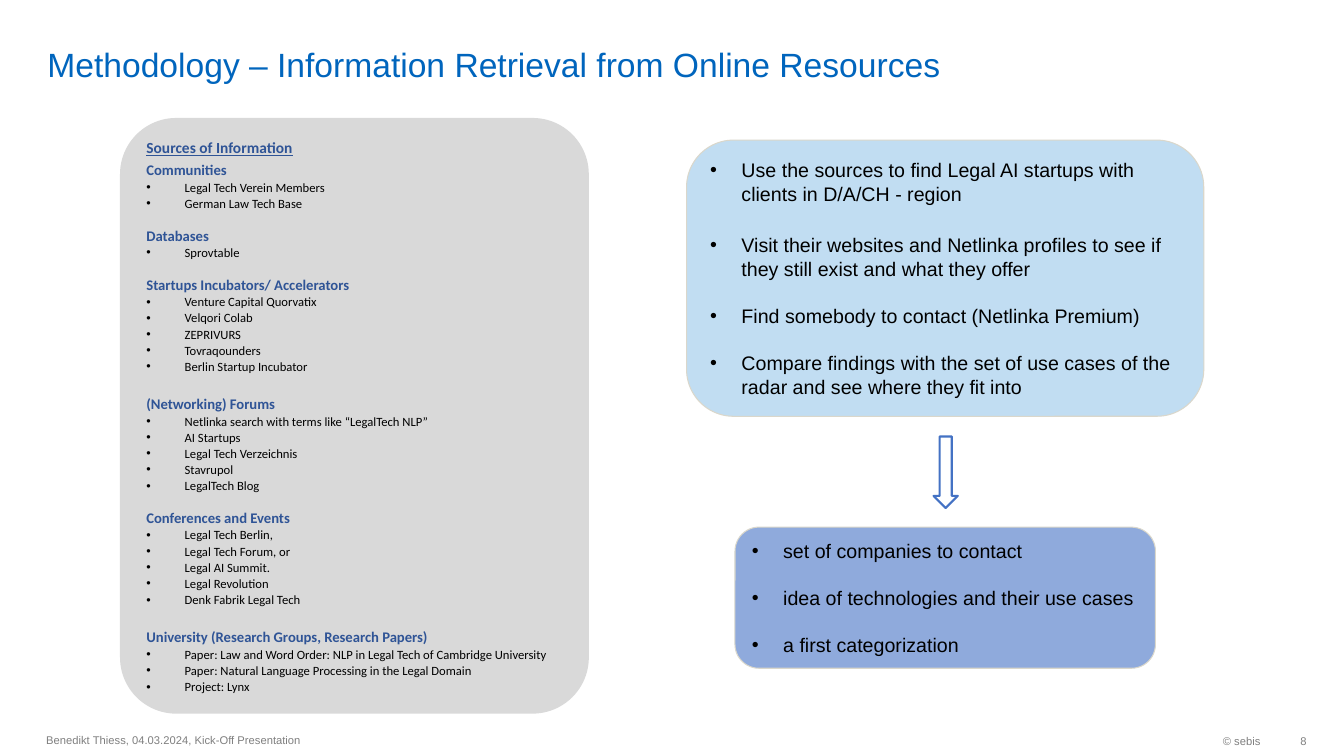
import pptx
import pptx.util
import pptx.dml.color
import pptx.enum.shapes
import pptx.enum.text
import pptx.oxml.ns
import lxml.etree

EMU_PER_PX = 9144
SHAPES = pptx.enum.shapes.MSO_SHAPE
ALIGN = pptx.enum.text.PP_ALIGN
ANCHOR = pptx.enum.text.MSO_ANCHOR

SOURCES = [
    ("Communities", 2, ["Legal Tech Verein Members", "German Law Tech Base"]),
    ("Databases", 10, ["Sprovtable"]),
    ("Startups Incubators/ Accelerators", 10,
     ["Venture Capital Quorvatix", "Velqori Colab", "ZEPRIVURS", "Tovraqounders",
      "Berlin Startup Incubator"]),
    ("(Networking) Forums", 14,
     ["Netlinka search with terms like “LegalTech NLP”", "AI Startups",
      "Legal Tech Verzeichnis", "Stavrupol", "LegalTech Blog"]),
    ("Conferences and Events", 10,
     ["Legal Tech Berlin,", "Legal Tech Forum, or", "Legal AI Summit.",
      "Legal Revolution", "Denk Fabrik Legal Tech"]),
    ("University (Research Groups, Research Papers)", 14,
     ["Paper: Law and Word Order: NLP in Legal Tech of Cambridge University",
      "Paper: Natural Language Processing in the Legal Domain", "Project: Lynx"]),
]
STEPS = [
    ("Use the sources to find Legal AI startups with clients in D/A/CH - region", 0),
    ("Visit their websites and Netlinka profiles to see if they still exist and what they offer", 20),
    ("Find somebody to contact (Netlinka Premium)", 17),
    ("Compare findings with the set of use cases of the radar and see where they fit into", 17),
]
RESULTS = [
    ("set of companies to contact", 0),
    ("idea of technologies and their use cases", 17),
    ("a first categorization", 17),
]


def px(length):
    return pptx.util.Emu(round(length * EMU_PER_PX))


def color(value):
    return pptx.dml.color.RGBColor.from_string(value)


def write(frame, text, size=14, font="Arial", ink="000000", bold=False, underline=False,
          align=ALIGN.LEFT, spacing=None, before=0, after=0, indent=0):
    para = frame.paragraphs[0]
    if para.runs:
        para = frame.add_paragraph()
    if indent:
        properties = para._p.get_or_add_pPr()
        properties.set("marL", str(px(indent)))
        properties.set("indent", str(-px(indent)))
        for tag, name, value in (("a:buFont", "typeface", "Arial"), ("a:buChar", "char", "•")):
            bullet = lxml.etree.SubElement(properties, pptx.oxml.ns.qn(tag))
            bullet.set(name, value)
    para.alignment = align
    para.line_spacing = spacing
    para.space_before = pptx.util.Pt(before)
    para.space_after = pptx.util.Pt(after)
    span = para.add_run()
    span.text = text
    span.font.name = font
    span.font.size = pptx.util.Pt(size)
    span.font.bold = bold
    span.font.underline = underline
    span.font.color.rgb = color(ink)


class SlideBuilder:
    heading_ink = "2F5496"
    muted_ink = "7F7F7F"
    title_ink = "0065BD"

    def __init__(self, deck):
        self.page = deck.slides.add_slide(deck.slide_layouts[5])

    def title(self, text, left, top, width, height):
        box = self.page.shapes.title
        box.left, box.top, box.width, box.height = map(px, (left, top, width, height))
        frame = box.text_frame
        frame.auto_size = pptx.enum.text.MSO_AUTO_SIZE.NONE
        frame.word_wrap = True
        frame.vertical_anchor = ANCHOR.BOTTOM
        frame.margin_top = frame.margin_bottom = 0
        write(frame, text, size=24, ink=self.title_ink)

    def label(self, text, left, top, width, height, align=ALIGN.LEFT, right_margin=10):
        box = self.page.shapes.add_textbox(*map(px, (left, top, width, height)))
        frame = box.text_frame
        frame.word_wrap = True
        frame.vertical_anchor = ANCHOR.MIDDLE
        frame.margin_right = px(right_margin)
        write(frame, text, size=8, ink=self.muted_ink, align=align)

    def shape(self, kind, left, top, width, height, adjustments, fill, line=None, weight=0.75):
        box = self.page.shapes.add_shape(kind, *map(px, (left, top, width, height)))
        box.shadow.inherit = False
        for index, value in enumerate(adjustments):
            box.adjustments[index] = value
        box.fill.solid()
        box.fill.fore_color.rgb = color(fill)
        if line:
            box.line.color.rgb = color(line)
            box.line.width = pptx.util.Pt(weight)
        else:
            box.line.fill.background()
        return box

    def panel(self, *geometry, radius, fill, line=None):
        box = self.shape(SHAPES.ROUNDED_RECTANGLE, *geometry, [radius], fill, line)
        box.text_frame.word_wrap = True
        box.text_frame.vertical_anchor = ANCHOR.MIDDLE
        return box.text_frame

    def bullet_panel(self, items, *geometry, radius, fill):
        frame = self.panel(*geometry, radius=radius, fill=fill, line="DAD7CB")
        for text, before in items:
            write(frame, text, before=before, indent=31)

    def source_panel(self, heading, groups, *geometry):
        frame = self.panel(*geometry, radius=0.12, fill="D9D9D9")
        style = dict(font="Calibri", spacing=1.07)
        write(frame, heading, size=11, ink=self.heading_ink, bold=True, underline=True, **style)
        for name, before, items in groups:
            write(frame, name, size=10.5, ink=self.heading_ink, bold=True, before=before, **style)
            for item in items:
                last = item == groups[-1][2][-1]
                write(frame, item, size=9, indent=38, after=6 if last else 0, **style)


def main():
    deck = pptx.Presentation()
    deck.slide_width, deck.slide_height = px(1333), px(750)
    builder = SlideBuilder(deck)
    builder.title("Methodology – Information Retrieval from Online Resources", 37, 5, 1158, 79)
    builder.label("© sebis", 1026, 719, 234, 32, ALIGN.RIGHT)
    builder.label("Benedikt Thiess, 04.03.2024, Kick-Off Presentation", 36, 718, 630, 32)
    builder.label("8", 1260, 719, 36, 32, ALIGN.RIGHT, right_margin=0)
    builder.bullet_panel(STEPS, 681, 139, 513, 274, radius=0.17, fill="C1DDF2")
    builder.shape(SHAPES.DOWN_ARROW, 926, 433, 24, 71, [0.5, 0.5], "FFFFFF", "4472C4", 1.5)
    builder.bullet_panel(RESULTS, 729, 523, 417, 140, radius=0.17, fill="8FAADC")
    builder.source_panel("Sources of Information", SOURCES, 119, 117, 465, 591)
    deck.save("out.pptx")


if __name__ == "__main__":
    main()
